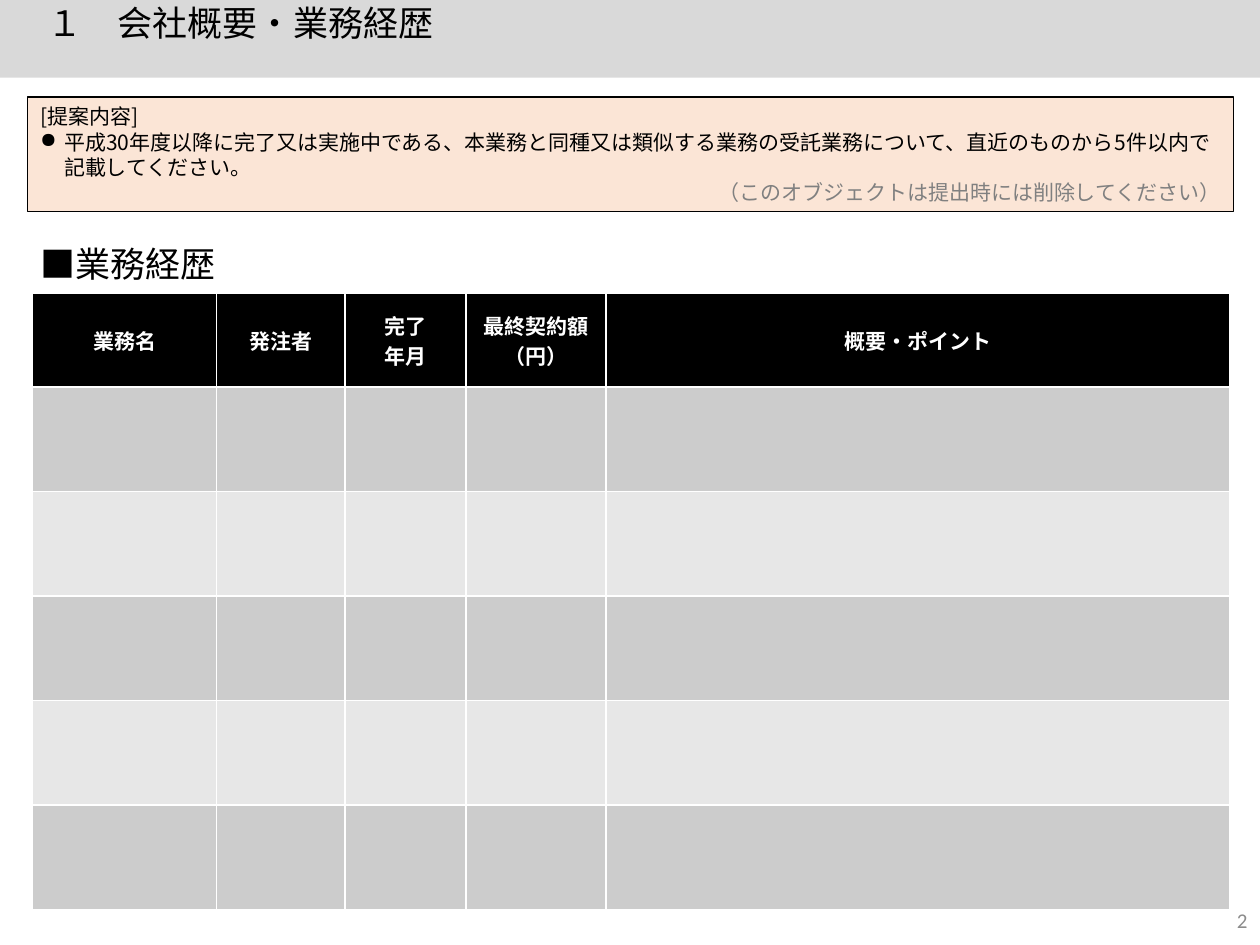
from dataclasses import dataclass
from lxml.etree import SubElement
from pptx import Presentation
from pptx.dml.color import RGBColor
from pptx.enum.shapes import MSO_SHAPE
from pptx.enum.text import MSO_ANCHOR as Anchor, MSO_AUTO_SIZE as AutoSize, PP_ALIGN as Align
from pptx.oxml.ns import qn
from pptx.slide import Slide
from pptx.util import Inches, Pt

BLACK = RGBColor(0x00, 0x00, 0x00)
WHITE = RGBColor(0xFF, 0xFF, 0xFF)
TITLE_GRAY = RGBColor(0xD9, 0xD9, 0xD9)
NOTE_PEACH = RGBColor(0xFB, 0xE5, 0xD6)
NOTE_GRAY = RGBColor(0x80, 0x80, 0x80)
NUMBER_GRAY = RGBColor(0x8C, 0x8C, 0x8C)
ROW_FILLS = (RGBColor(0xCC, 0xCC, 0xCC), RGBColor(0xE7, 0xE7, 0xE7))
GRID = Inches(0.1)


def grid(*cells):
    return [round(cell * GRID) for cell in cells]


@dataclass
class CompanyPage:
    """Style and slide of the company page, on a grid of 100 columns by 75 rows."""

    page: Slide
    font: str = "Noto Sans CJK JP"
    heading_size: int = 20
    body_size: int = 12

    def format_para(self, para, size, color=BLACK, bold=False, align=Align.LEFT, font=None):
        para.alignment = align
        for span in para.runs:
            span.font.size = Pt(size)
            span.font.bold = bold
            span.font.color.rgb = color
            span.font.name = font or self.font
            SubElement(span.font._element, qn("a:ea")).set("typeface", font or self.font)

    def format_heading(self, box, text):
        frame = box.text_frame
        frame.text = text
        frame.word_wrap = True
        frame.auto_size = AutoSize.SHAPE_TO_FIT_TEXT
        frame.vertical_anchor = Anchor.MIDDLE
        para = frame.paragraphs[0]
        para.line_spacing = 0.9
        para.space_before = Pt(7.5)
        self.format_para(para, self.heading_size)

    def title(self, text, *area):
        box = self.page.shapes.title
        box.left, box.top, box.width, box.height = grid(*area)
        box.fill.solid()
        box.fill.fore_color.rgb = TITLE_GRAY
        self.format_heading(box, text)

    def heading(self, text, *area):
        self.format_heading(self.page.shapes.add_textbox(*grid(*area)), text)

    def note(self, label, request, reminder, *area):
        box = self.page.shapes.add_shape(MSO_SHAPE.RECTANGLE, *grid(*area))
        box.shadow.inherit = False
        box.fill.solid()
        box.fill.fore_color.rgb = NOTE_PEACH
        box.line.color.rgb = BLACK
        box.line.width = Pt(0.75)
        frame = box.text_frame
        frame.text = "\n".join((label, request, reminder))
        frame.word_wrap = True
        frame.auto_size = AutoSize.SHAPE_TO_FIT_TEXT
        frame.vertical_anchor = Anchor.MIDDLE
        label_para, request_para, reminder_para = frame.paragraphs
        self.format_para(label_para, self.body_size)
        self.format_para(request_para, self.body_size)
        self.format_para(reminder_para, self.body_size, NOTE_GRAY, align=Align.RIGHT)
        indent = Inches(0.19)
        properties = request_para._p.get_or_add_pPr()
        properties.set("marL", str(indent))
        properties.set("indent", str(-indent))
        SubElement(properties, qn("a:buChar")).set("char", "●")

    def table(self, columns, body_rows, left, top, header_height, row_height):
        width = sum(columns.values())
        height = header_height + body_rows * row_height
        frame = self.page.shapes.add_table(
            body_rows + 1, len(columns), *grid(left, top, width, height))
        table = frame.table
        for column, size in zip(table.columns, grid(*columns.values())):
            column.width = size
        heights = grid(header_height, *[row_height] * body_rows)
        for index, (row, size) in enumerate(zip(table.rows, heights)):
            row.height = size
            for cell in row.cells:
                cell.fill.solid()
                cell.fill.fore_color.rgb = ROW_FILLS[(index - 1) % 2] if index else BLACK
        for cell, text in zip(table.rows[0].cells, columns):
            cell.text = text
            cell.vertical_anchor = Anchor.MIDDLE
            for para in cell.text_frame.paragraphs:
                self.format_para(para, self.body_size, WHITE, True, Align.CENTER)

    def page_number(self, text, *area):
        frame = self.page.shapes.add_textbox(*grid(*area)).text_frame
        frame.text = text
        frame.word_wrap = True
        frame.vertical_anchor = Anchor.MIDDLE
        self.format_para(frame.paragraphs[0], self.body_size, NUMBER_GRAY,
                         align=Align.RIGHT, font="Calibri")


def main():
    deck = Presentation()
    deck.slide_width, deck.slide_height = grid(100, 75)
    company = CompanyPage(deck.slides.add_slide(deck.slide_layouts[5]))
    company.page_number("2", 77.5, 71, 22.5, 4)
    company.title("　１　会社概要・業務経歴", 0, 0, 100, 4)
    columns = {
        "業務名": 14.6,
        "発注者": 10.2,
        "完了\n年月": 9.6,
        "最終契約額（円）": 11.1,
        "概要・ポイント": 49.5,
    }
    company.table(columns, 5, left=2.6, top=23.3, header_height=7.4, row_height=8.3)
    company.heading("■業務経歴", 2.2, 19.1, 22.4, 4)
    company.note(
        "[提案内容]",
        "平成30年度以降に完了又は実施中である、本業務と同種又は類似する業務の受託業務について、"
        "直近のものから5件以内で記載してください。",
        "（このオブジェクトは提出時には削除してください）",
        2.2, 7.7, 95.7, 9.1)
    deck.save("out.pptx")


if __name__ == "__main__":
    main()
